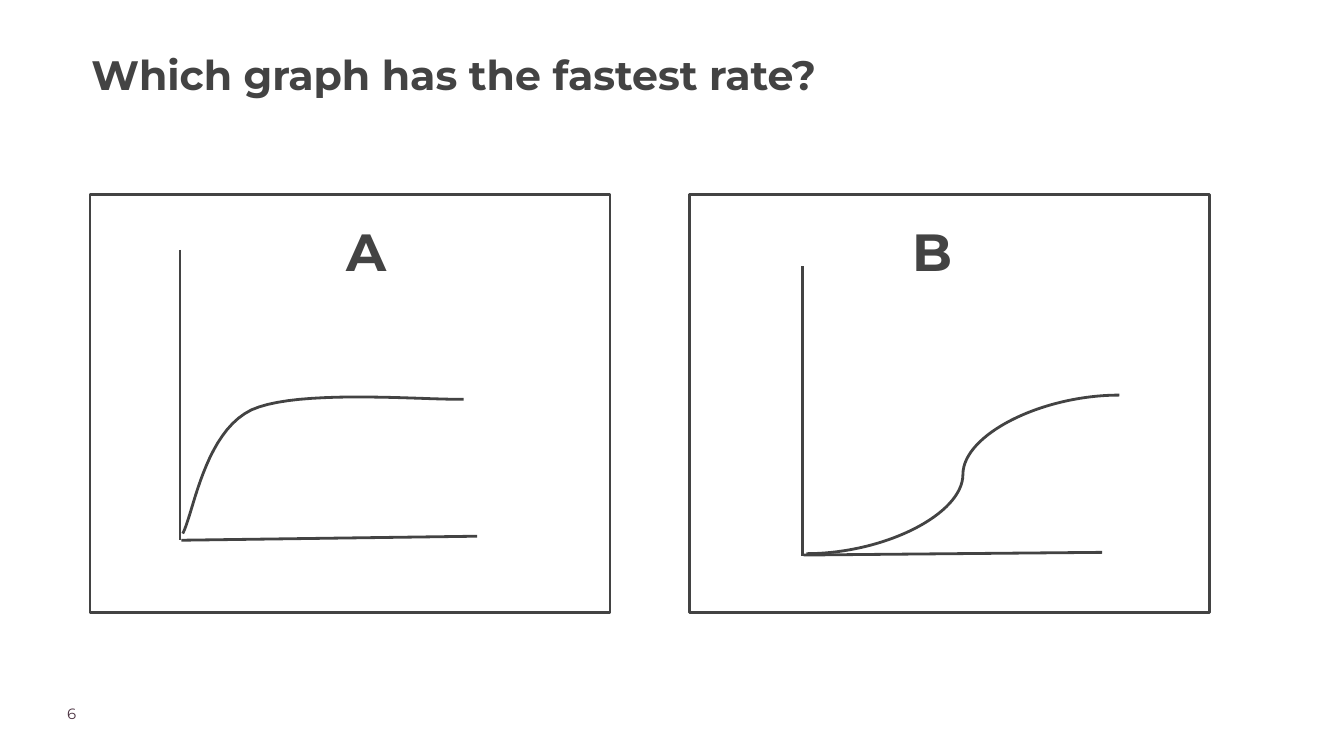
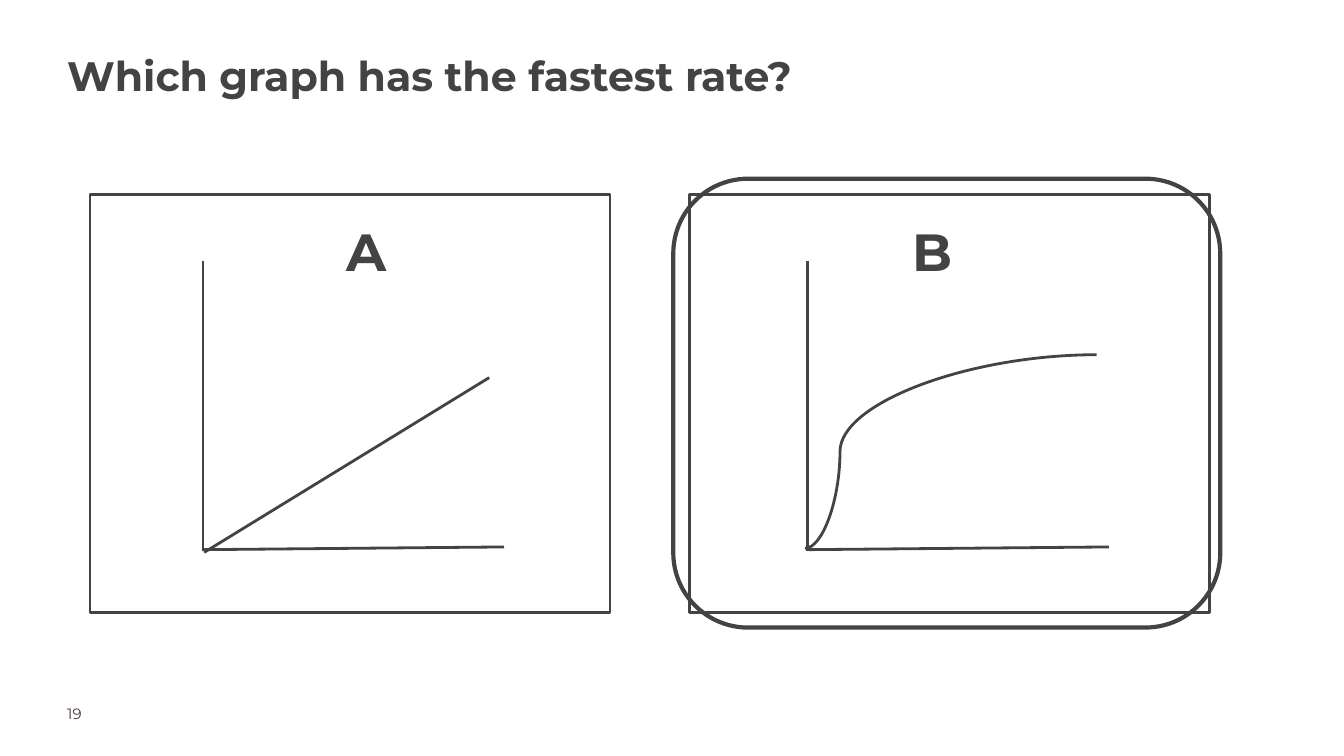
from dataclasses import dataclass
from typing import Optional

from lxml.etree import SubElement
from pptx import Presentation
from pptx.dml.color import RGBColor
from pptx.enum.shapes import MSO_CONNECTOR, MSO_SHAPE
from pptx.enum.text import MSO_ANCHOR, MSO_AUTO_SIZE, PP_ALIGN
from pptx.oxml.ns import qn
from pptx.util import Inches, Pt

INK = RGBColor(0x43, 0x43, 0x43)
PAGE_NUMBER = RGBColor(0x4B, 0x32, 0x41)
WHITE = RGBColor(0xFF, 0xFF, 0xFF)
FONT = "Montserrat"
SLIDE_WIDTH = Inches(10)
SLIDE_HEIGHT = SLIDE_WIDTH * 9 // 16
QUESTION = "Which graph has the fastest rate?"
LINE_WIDTH = 1.5
PANEL_LEFTS = (0.67, 5.13)
PANEL_TOP, PANEL_WIDTH, PANEL_HEIGHT = 1.45, 3.87, 3.11
LETTERS = (("A", 2.53), ("B", 6.74))
BEZIER_STEPS = 20

Point = tuple[float, float]


@dataclass(frozen=True)
class Axes:
    x: float
    top: float
    bottom: float
    right: Point
    origin: Point


@dataclass(frozen=True)
class Trend:
    start: Point
    end: Point
    bend: Optional[float] = None


@dataclass(frozen=True)
class Bezier:
    start: Point
    segments: tuple[tuple[Point, Point, Point], ...]


@dataclass(frozen=True)
class Question:
    number: str
    title_left: float
    title_top: float
    axes: tuple[Axes, Axes]
    trends: tuple[Trend, ...]
    bezier: Optional[Bezier] = None
    answer: Optional[tuple[float, float, float, float]] = None


QUESTIONS = (
    Question(
        "6", 0.68, 0.31,
        axes=(Axes(1.34, 1.86, 4.02, (3.55, 3.99), (1.35, 4.02)),
              Axes(5.97, 1.98, 4.14, (8.2, 4.11), (5.98, 4.13))),
        trends=(Trend((6, 4.12), (8.33, 2.94), 0.5),),
        bezier=Bezier((1.36, 3.97), (
            ((1.44, 3.82), (1.52, 3.22), (1.87, 3.05)),
            ((2.22, 2.89), (3.19, 2.98), (3.45, 2.97)),
        )),
    ),
    Question(
        "19", 0.5, 0.32,
        axes=(Axes(1.51, 1.94, 4.1, (3.75, 4.07), (1.52, 4.09)),
              Axes(6.01, 1.94, 4.1, (8.25, 4.07), (6.02, 4.09))),
        trends=(Trend((5.99, 4.08), (8.16, 2.64), 0.12),
                Trend((1.52, 4.11), (3.64, 2.81))),
        answer=(5.01, 1.33, 4.07, 3.34),
    ),
)


def write(shape, text: str, size: float, color: RGBColor, bold: bool = False,
          inset: float = 0, spacing: Optional[float] = None) -> None:
    """Fill a text frame with one left-aligned run."""
    frame = shape.text_frame
    frame.word_wrap = True
    frame.auto_size = MSO_AUTO_SIZE.NONE
    frame.vertical_anchor = MSO_ANCHOR.TOP
    frame.margin_left = frame.margin_right = Inches(inset)
    frame.margin_top = frame.margin_bottom = Inches(inset)
    paragraph = frame.paragraphs[0]
    paragraph.alignment = PP_ALIGN.LEFT
    if spacing:
        paragraph.line_spacing = spacing
    run = paragraph.add_run()
    run.text = text
    run.font.name = FONT
    run.font.size = Pt(size)
    run.font.bold = bold
    run.font.color.rgb = color


def add_title(slide, left: float, top: float) -> None:
    """Place the question in the title placeholder."""
    title = slide.shapes.title
    title.left, title.top = Inches(left), Inches(top)
    title.width, title.height = Inches(9), Inches(0.89)
    write(title, QUESTION, 22, INK, bold=True, spacing=1.15)


def add_label(slide, box: tuple[float, float, float, float], text: str, size: float,
              color: RGBColor, bold: bool = False, inset: float = 0) -> None:
    """Add a text box with one label."""
    label = slide.shapes.add_textbox(*map(Inches, box))
    write(label, text, size, color, bold, inset)


def add_frame(slide, preset: MSO_SHAPE, box: tuple[float, float, float, float],
              width: float, fill: Optional[RGBColor] = None) -> None:
    """Add an outlined shape, filled only when a colour is given."""
    frame = slide.shapes.add_shape(preset, *map(Inches, box))
    frame.shadow.inherit = False
    if fill is None:
        frame.fill.background()
    else:
        frame.fill.solid()
        frame.fill.fore_color.rgb = fill
    frame.line.color.rgb = INK
    frame.line.width = Pt(width)


def add_line(shapes, start: Point, end: Point, bend: Optional[float] = None) -> None:
    """Add a straight line, or an S-curve that turns at the given bend."""
    kind = MSO_CONNECTOR.STRAIGHT if bend is None else MSO_CONNECTOR.CURVE
    line = shapes.add_connector(kind, *map(Inches, start + end))
    line.line.color.rgb = INK
    line.line.width = Pt(LINE_WIDTH)
    properties = line._element.spPr
    SubElement(properties, qn("a:effectLst"))
    if bend is not None:
        guides = properties.find(qn("a:prstGeom")).get_or_add_avLst()
        SubElement(guides, qn("a:gd"), name="adj1", fmla=f"val {round(bend * 100000)}")


def add_axes(slide, axes: Axes) -> None:
    """Add the two axes of a graph as a group."""
    group = slide.shapes.add_group_shape()
    add_line(group.shapes, (axes.x, axes.top), (axes.x, axes.bottom))
    add_line(group.shapes, axes.origin, axes.right)


def bezier_point(corners: tuple[Point, ...], t: float) -> Point:
    """Return the point at t on a cubic curve."""
    weights = ((1 - t) ** 3, 3 * t * (1 - t) ** 2, 3 * t ** 2 * (1 - t), t ** 3)
    x, y = (sum(w * c[axis] for w, c in zip(weights, corners)) for axis in (0, 1))
    return x, y


def add_bezier(slide, bezier: Bezier) -> None:
    """Draw a smooth open curve."""
    builder = slide.shapes.build_freeform(*map(Inches, bezier.start))
    points = []
    start = bezier.start
    for segment in bezier.segments:
        corners = (start, *segment)
        points += [bezier_point(corners, step / BEZIER_STEPS)
                   for step in range(1, BEZIER_STEPS + 1)]
        start = segment[-1]
    builder.add_line_segments([(Inches(x), Inches(y)) for x, y in points], close=False)
    curve = builder.convert_to_shape()
    curve.shadow.inherit = False
    curve.fill.background()
    curve.line.color.rgb = INK
    curve.line.width = Pt(LINE_WIDTH)


def add_question(presentation, question: Question) -> None:
    """Build one slide that compares graphs A and B."""
    slide = presentation.slides.add_slide(presentation.slide_layouts[5])
    slide.background.fill.solid()
    slide.background.fill.fore_color.rgb = WHITE
    add_title(slide, question.title_left, question.title_top)
    add_label(slide, (0.5, 5.24, 0.79, 0.2), question.number, 8, PAGE_NUMBER)
    for left in PANEL_LEFTS:
        add_frame(slide, MSO_SHAPE.RECTANGLE,
                  (left, PANEL_TOP, PANEL_WIDTH, PANEL_HEIGHT), LINE_WIDTH, WHITE)
    for axes in question.axes:
        add_axes(slide, axes)
    for trend in question.trends:
        add_line(slide.shapes, trend.start, trend.end, trend.bend)
    if question.bezier:
        add_bezier(slide, question.bezier)
    for letter, left in LETTERS:
        add_label(slide, (left, 1.58, 0.66, 0.51), letter, 28, INK, bold=True, inset=0.05)
    if question.answer:
        add_frame(slide, MSO_SHAPE.ROUNDED_RECTANGLE, question.answer, 2.25)


def main() -> None:
    """Build and save the presentation."""
    presentation = Presentation()
    presentation.slide_width = SLIDE_WIDTH
    presentation.slide_height = SLIDE_HEIGHT
    for question in QUESTIONS:
        add_question(presentation, question)
    presentation.save("out.pptx")


if __name__ == "__main__":
    main()
